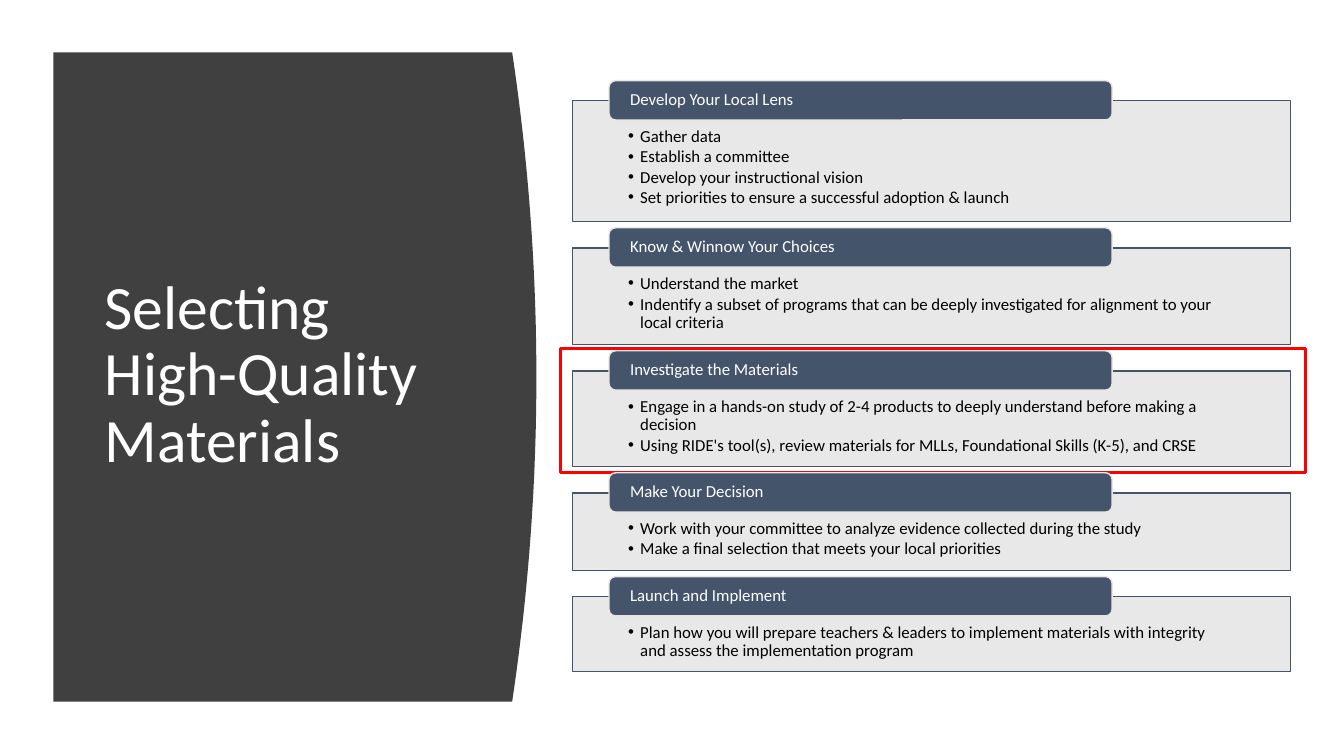
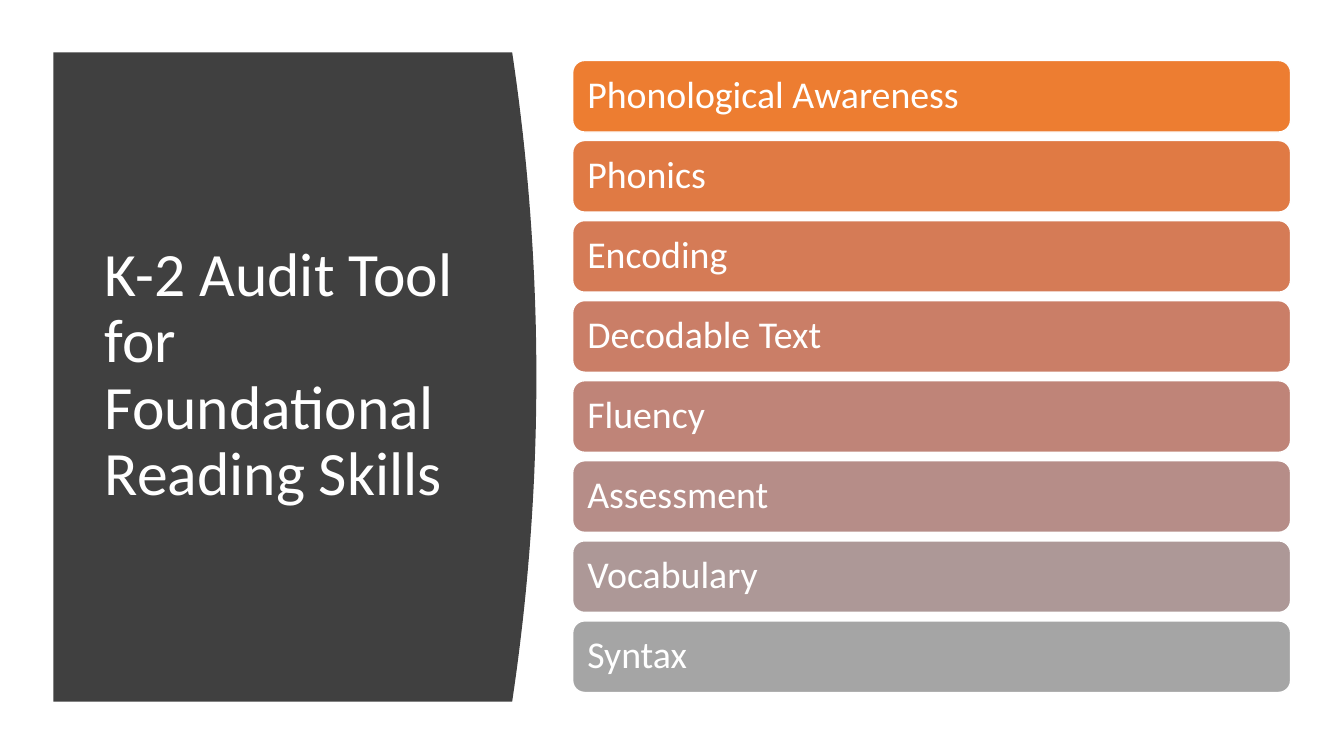
from colorsys import hls_to_rgb, rgb_to_hls

from lxml import etree
from pptx import Presentation
from pptx.dml.color import RGBColor
from pptx.enum.shapes import MSO_SHAPE
from pptx.enum.text import MSO_ANCHOR, PP_ALIGN
from pptx.oxml.ns import qn
from pptx.util import Inches, Pt

RECTANGLE = MSO_SHAPE.RECTANGLE
ROUNDED = MSO_SHAPE.ROUNDED_RECTANGLE
TOP, MIDDLE = MSO_ANCHOR.TOP, MSO_ANCHOR.MIDDLE
LEFT = PP_ALIGN.LEFT

FONT = "Calibri"
WHITE = RGBColor(0xFF, 0xFF, 0xFF)
BLACK = RGBColor(0x00, 0x00, 0x00)
CHARCOAL = RGBColor(0x40, 0x40, 0x40)
SLATE = RGBColor(0x44, 0x54, 0x6A)
LIGHT_GRAY = RGBColor(0xE7, 0xE6, 0xE6)
RED = RGBColor(0xFF, 0x00, 0x00)
ORANGE = RGBColor(0xED, 0x7D, 0x31)
GRAY = RGBColor(0xA5, 0xA5, 0xA5)

# Boxes are left, top, width, height in inches
TITLE_PANEL = (0.53, 0.52, 4.79, 6.44)
STEPS_BOX = (5.68, 1.0, 7.12, 5.66)
BARS_BOX = (5.68, 0.6, 7.12, 6.27)

# Heading, panel height, bullets
STEPS = [
    ("Develop Your Local Lens", 1.2, [
        "Gather data",
        "Establish a committee",
        "Develop your instructional vision",
        "Set priorities to ensure a successful adoption & launch"]),
    ("Know & Winnow Your Choices", 0.96, [
        "Understand the market",
        "Indentify a subset of programs that can be deeply investigated "
        "for alignment to your local criteria"]),
    ("Investigate the Materials", 0.95, [
        "Engage in a hands-on study of 2-4 products to deeply understand "
        "before making a decision",
        "Using RIDE's tool(s), review materials for MLLs, "
        "Foundational Skills (K-5), and CRSE"]),
    ("Make Your Decision", 0.77, [
        "Work with your committee to analyze evidence collected during the study",
        "Make a final selection that meets your local priorities"]),
    ("Launch and Implement", 0.74, [
        "Plan how you will prepare teachers & leaders to implement materials "
        "with integrity and assess the implementation program"]),
]
CURRENT_STEP = "Investigate the Materials"

SKILLS = ["Phonological Awareness", "Phonics", "Encoding", "Decodable Text",
          "Fluency", "Assessment", "Vocabulary", "Syntax"]


def add_box(slide, kind, box, fill, line, line_width=1):
    shape = slide.shapes.add_shape(kind, *map(Inches, box))
    shape.shadow.inherit = False
    if fill is None:
        shape.fill.background()
    else:
        shape.fill.solid()
        shape.fill.fore_color.rgb = fill
    shape.line.color.rgb = line
    shape.line.width = Pt(line_width)
    return shape


def set_opacity(shape, percent):
    color = shape.fill._xPr.find(qn("a:solidFill"))[0]
    etree.SubElement(color, qn("a:alpha")).set("val", str(percent * 1000))


def add_bullet(paragraph, indent):
    properties = paragraph._p.get_or_add_pPr()
    properties.set("marL", str(Inches(indent)))
    properties.set("indent", str(-Inches(indent)))
    etree.SubElement(properties, qn("a:buFont")).set("typeface", "Arial")
    etree.SubElement(properties, qn("a:buChar")).set("char", "•")


def write(shape, lines, size, color, insets, anchor=MIDDLE, bullets=False):
    frame = shape.text_frame
    frame.word_wrap = True
    frame.vertical_anchor = anchor
    (frame.margin_left, frame.margin_top,
     frame.margin_right, frame.margin_bottom) = map(Inches, insets)
    frame.text = "\n".join(lines)
    for paragraph in frame.paragraphs:
        paragraph.alignment = LEFT
        paragraph.line_spacing = 0.9
        if bullets:
            paragraph.space_after = Pt(1.6)
            add_bullet(paragraph, 0.12)
        paragraph.font.name = FONT
        paragraph.font.size = Pt(size)
        paragraph.font.color.rgb = color


def add_title_panel(slide, box, title):
    """Dark panel with a bowed right edge, and the slide title on it."""
    left, top, width, height = box
    bow, steps = 0.24, 40
    edge = []
    for step in range(steps + 1):
        offset = 2 * step / steps - 1
        edge.append((Inches(left + width - bow * offset ** 2),
                     Inches(top + height * step / steps)))
    builder = slide.shapes.build_freeform(Inches(left), Inches(top))
    builder.add_line_segments(edge + [(Inches(left), Inches(top + height))])
    panel = builder.convert_to_shape()
    panel.shadow.inherit = False
    panel.fill.solid()
    panel.fill.fore_color.rgb = CHARCOAL
    panel.line.fill.background()

    title_box = (left + 0.41, top + 0.59, 3.74, height - 1.2)
    text_box = slide.shapes.add_textbox(*map(Inches, title_box))
    write(text_box, [title], 44, WHITE, (0.1, 0.05, 0.1, 0.05))


def add_steps(slide, box):
    """Bulleted panels, each with a heading tab over its top edge."""
    left, top, width, _ = box
    gap = 0.26
    for heading, height, bullets in STEPS:
        if heading == CURRENT_STEP:
            frame_box = (left - 0.12, top - 0.22, width + 0.27, height + 0.28)
            add_box(slide, RECTANGLE, frame_box, None, RED, 2.25)
        panel = add_box(slide, RECTANGLE, (left, top, width, height),
                        LIGHT_GRAY, SLATE)
        set_opacity(panel, 90)
        write(panel, bullets, 12, BLACK, (0.55, 0.27, 0.55, 0.09), TOP, True)
        tab = add_box(slide, ROUNDED, (left + 0.36, top - 0.2, 4.99, 0.39),
                      SLATE, LIGHT_GRAY)
        write(tab, [heading], 12, WHITE, (0.19, 0, 0.19, 0))
        top += height + gap


def blend(start, end, share):
    """Colour between two others, by hue, lightness and saturation."""
    first, last = (rgb_to_hls(*(part / 255 for part in color))
                   for color in (start, end))
    mixed = (a + (b - a) * share for a, b in zip(first, last))
    return RGBColor(*(round(part * 255) for part in hls_to_rgb(*mixed)))


def add_bars(slide, box):
    """Equal bars, fading from orange to gray."""
    left, top, width, height = box
    bar_height = 0.71
    last = len(SKILLS) - 1
    pitch = (height - bar_height) / last
    for index, skill in enumerate(SKILLS):
        bar = add_box(slide, ROUNDED,
                      (left, top + index * pitch, width, bar_height),
                      blend(ORANGE, GRAY, index / last), WHITE)
        write(bar, [skill], 27, WHITE, (0.11,) * 4)


def main():
    presentation = Presentation()
    presentation.slide_width = Inches(13.33)
    presentation.slide_height = Inches(7.5)
    blank = presentation.slide_layouts[6]
    for title, add_content, box in (
            ("Selecting High-Quality Materials", add_steps, STEPS_BOX),
            ("K-2 Audit Tool for Foundational Reading Skills",
             add_bars, BARS_BOX)):
        slide = presentation.slides.add_slide(blank)
        add_title_panel(slide, TITLE_PANEL, title)
        add_content(slide, box)
    presentation.save("out.pptx")


if __name__ == "__main__":
    main()
